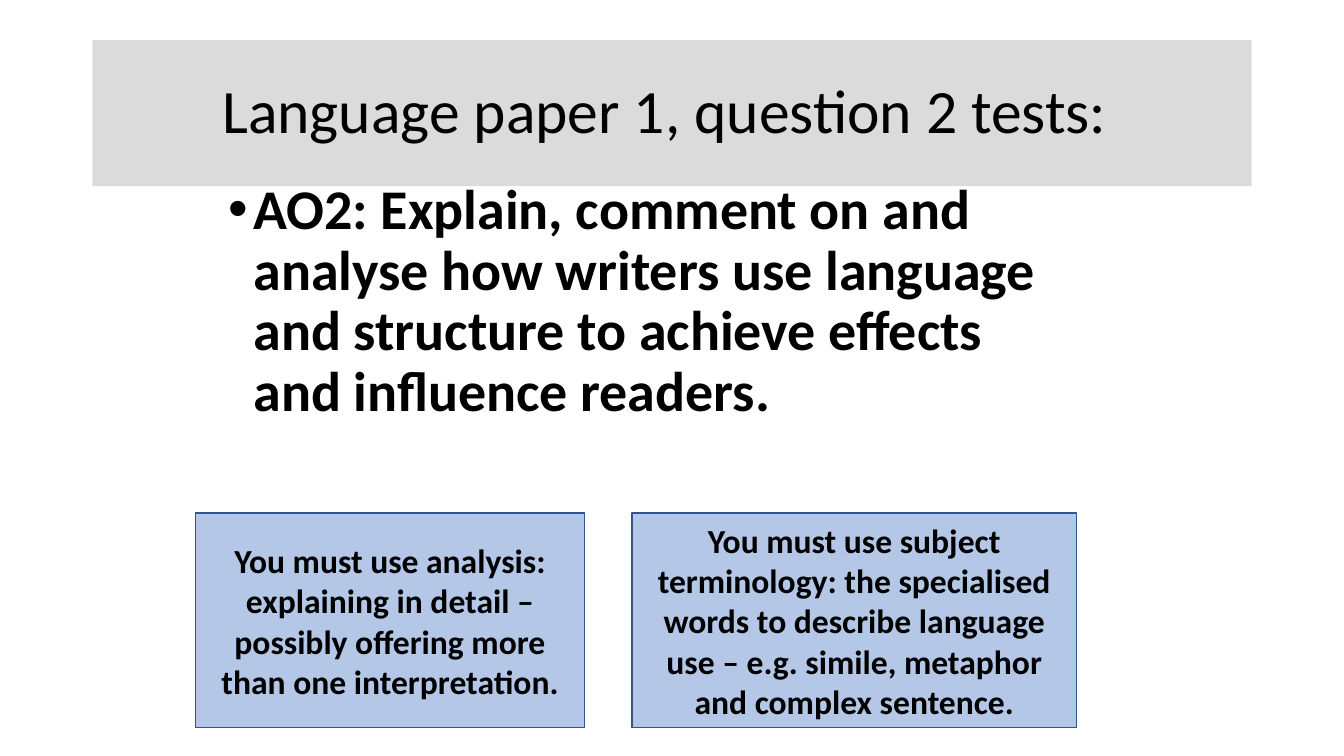
"""Build a slide on what Language paper 1, question 2 tests."""
from lxml import etree
from pptx import Presentation
from pptx.dml.color import RGBColor
from pptx.enum.shapes import MSO_SHAPE
from pptx.enum.text import MSO_ANCHOR, MSO_AUTO_SIZE, PP_ALIGN
from pptx.oxml.ns import qn
from pptx.util import Cm, Pt

RECT = MSO_SHAPE.RECTANGLE
MIDDLE = MSO_ANCHOR.MIDDLE
TOP = MSO_ANCHOR.TOP
NO_FIT = MSO_AUTO_SIZE.NONE
CENTER = PP_ALIGN.CENTER
LEFT = PP_ALIGN.LEFT


def rgb(value):
    return RGBColor.from_string(value)


def write(sp, text, size, bold, align, anchor):
    tf = sp.text_frame
    tf.word_wrap = True
    tf.auto_size = NO_FIT
    tf.vertical_anchor = anchor
    p = tf.paragraphs[0]
    p.alignment = align
    r = p.add_run()
    r.text = text
    r.font.name = "Calibri"
    r.font.size = Pt(size)
    r.font.bold = bold
    r.font.color.rgb = rgb("000000")
    return p


prs = Presentation()
prs.slide_width, prs.slide_height = Cm(33.87), Cm(19.05)
s = prs.slides.add_slide(prs.slide_layouts[5])

title = s.shapes.title
title.left, title.top = Cm(2.33), Cm(1.01)
title.width, title.height = Cm(29.21), Cm(3.68)
title.fill.solid()
title.fill.fore_color.rgb = rgb("DBDBDB")
p = write(title, "Language paper 1, question 2 tests: ", 44, False, CENTER, MIDDLE)
p.line_spacing = 0.9

objective = s.shapes.add_textbox(Cm(5.5), Cm(4.45), Cm(21.17), Cm(8.68))
p = write(
    objective,
    "AO2: Explain, comment on and analyse how writers use language "
    "and structure to achieve effects and influence readers.",
    40, True, LEFT, TOP,
)
p.line_spacing = 0.9
p.space_before = Pt(10)
pPr = p._p.get_or_add_pPr()
pPr.set("marL", str(Cm(0.64)))
pPr.set("indent", str(Cm(-0.64)))
etree.SubElement(pPr, qn("a:buFont")).set("typeface", "Arial")
etree.SubElement(pPr, qn("a:buChar")).set("char", "•")

boxes = [
    (4.93, 9.8, "You must use analysis: explaining in detail – "
                "possibly offering more than one interpretation."),
    (15.93, 11.2, "You must use subject terminology: the specialised words to "
                  "describe language use – e.g. simile, metaphor and complex sentence."),
]
for left, width, text in boxes:
    sp = s.shapes.add_shape(RECT, Cm(left), Cm(12.93), Cm(width), Cm(5.41))
    sp.shadow.inherit = False
    sp.fill.solid()
    sp.fill.fore_color.rgb = rgb("B4C7E7")
    sp.line.color.rgb = rgb("325491")
    sp.line.width = Pt(1)
    write(sp, text, 24, True, CENTER, MIDDLE)

prs.save("out.pptx")
